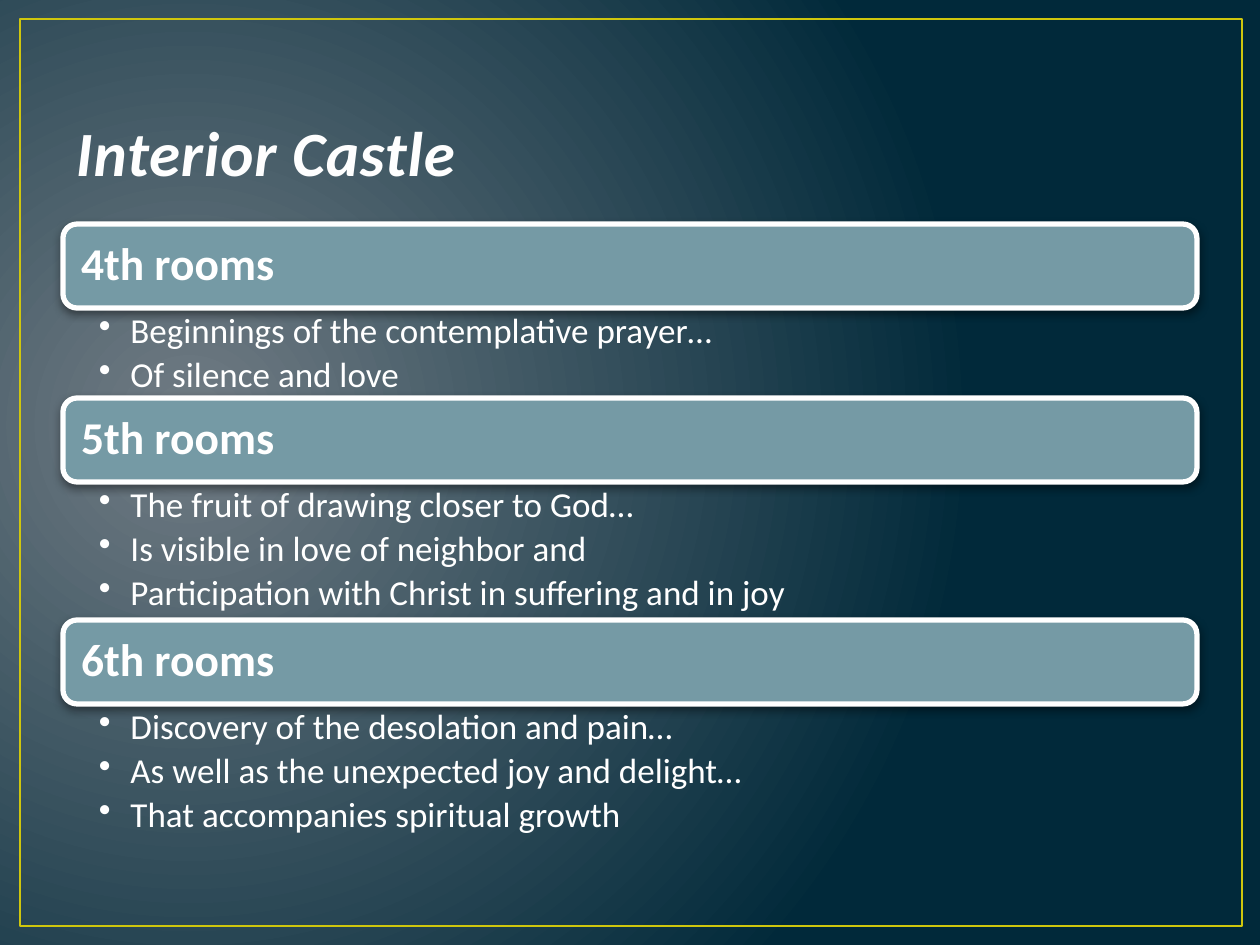
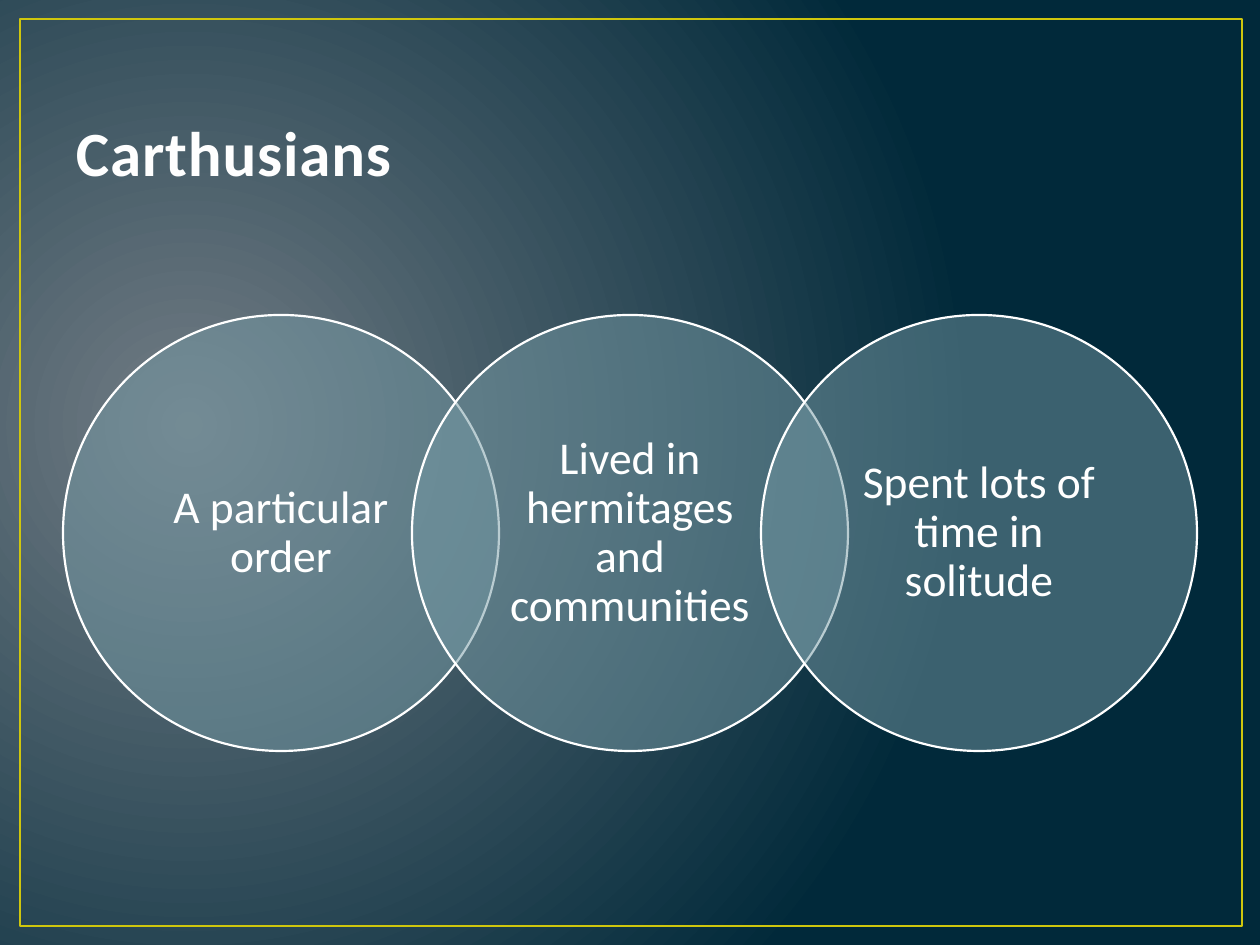
from dataclasses import dataclass

from lxml import etree
from pptx import Presentation
from pptx import util as u
from pptx.dml.color import RGBColor
from pptx.enum import shapes, text
from pptx.oxml.ns import qn

PX = u.Inches(1) / 126
WIDE, HIGH = 1260, 945
LEFT, SPAN = 63, 1134
FONT = "Calibri"

GLOW = RGBColor(0x71, 0x7C, 0x84)
NIGHT = RGBColor(0x01, 0x29, 0x3A)
GOLD = RGBColor(0xCF, 0xC6, 0x0D)
TEAL = RGBColor(0x75, 0x9A, 0xA5)
WHITE = RGBColor(0xFF, 0xFF, 0xFF)
PEARL = RGBColor(0xFE, 0xFE, 0xFE)

KIND = shapes.MSO_SHAPE
ALIGN = text.PP_ALIGN
ANCHOR = text.MSO_ANCHOR


@dataclass(frozen=True)
class Box:
    x: int
    y: int
    w: int
    h: int

    def emu(self) -> list[int]:
        return [px(n) for n in (self.x, self.y, self.w, self.h)]


@dataclass(frozen=True)
class Style:
    size: int
    bold: bool = False
    slant: bool = False
    color: RGBColor = WHITE
    align: ALIGN = ALIGN.LEFT
    line: float = 0.9
    after: float = 0


@dataclass(frozen=True)
class Room:
    name: str
    notes: tuple[str, ...]


ROOMS = (
    Room("4th rooms", ("Beginnings of the contemplative prayer…",
                       "Of silence and love")),
    Room("5th rooms", ("The fruit of drawing closer to God…",
                       "Is visible in love of neighbor and",
                       "Participation with Christ in suffering and in joy")),
    Room("6th rooms", ("Discovery of the desolation and pain…",
                       "As well as the unexpected joy and delight…",
                       "That accompanies spiritual growth")),
)
TRAITS = (
    "A particular order",
    "Lived in hermitages and communities",
    "Spent lots of time in solitude",
)
HEAD = Style(26, bold=True)
NOTE = Style(20, after=3.6)
TRAIT = Style(26, align=ALIGN.CENTER)


def px(n: float) -> int:
    return round(n * PX)


def add(parent, tag: str, **attrs):
    return etree.SubElement(parent, qn(tag), {k: str(v) for k, v in attrs.items()})


def write(shape, lines: tuple[str, ...], style: Style, anchor: ANCHOR,
          pad: tuple[int, int, int, int]) -> None:
    frame = shape.text_frame
    frame.text = "\n".join(lines)
    frame.word_wrap = True
    frame.vertical_anchor = anchor
    (frame.margin_left, frame.margin_top,
     frame.margin_right, frame.margin_bottom) = map(px, pad)
    for para in frame.paragraphs:
        para.alignment = style.align
        para.line_spacing = style.line
        para.space_after = u.Pt(style.after)
        for run in para.runs:
            font = run.font
            font.name, font.size = FONT, u.Pt(style.size)
            font.bold, font.italic = style.bold, style.slant
            font.color.rgb = style.color


def draw(slide, kind: KIND, box: Box, edge: RGBColor, width: float,
         fill: RGBColor | None = None):
    shape = slide.shapes.add_shape(kind, *box.emu())
    shape.shadow.inherit = False
    if fill is None:
        shape.fill.background()
    else:
        shape.fill.solid()
        shape.fill.fore_color.rgb = fill
    shape.line.color.rgb = edge
    shape.line.width = u.Pt(width)
    return shape


def paint(slide) -> None:
    fill = slide.background.fill
    fill.gradient()
    for stop, tone in zip(fill.gradient_stops, (GLOW, NIGHT)):
        stop.color.rgb = tone
    grad = slide.background._cSld.find(".//" + qn("a:gradFill"))
    grad.remove(grad.find(qn("a:lin")))
    glow = add(grad, "a:path", path="circle")
    add(glow, "a:fillToRect", l=15000, t=50000, r=85000, b=60000)


def start(deck, title: str, slant: bool = False):
    slide = deck.slides.add_slide(deck.slide_layouts[6])
    paint(slide)
    draw(slide, KIND.RECTANGLE, Box(20, 19, 1222, 907), GOLD, 1.5)
    box = slide.shapes.add_textbox(*Box(LEFT, 38, SPAN, 157).emu())
    write(box, (title,), Style(36, True, slant, PEARL, line=1.0),
          ANCHOR.BOTTOM, (13, 6, 13, 6))
    for run in box.text_frame.paragraphs[0].runs:
        run.font._element.set("spc", "50")
    return slide


def shade(shape) -> None:
    glow = shape._element.spPr.find(qn("a:effectLst"))
    drop = add(glow, "a:outerShdw", blurRad=u.Pt(5), dist=u.Pt(2),
               dir=5400000, rotWithShape=0)
    tone = add(drop, "a:srgbClr", val="000000")
    add(tone, "a:alpha", val=43000)


def dot(para) -> None:
    para.level = 1
    props = para._p.get_or_add_pPr()
    props.set("marL", str(u.Inches(0.25)))
    props.set("indent", str(-u.Inches(0.25)))
    add(props, "a:buChar", char="•")


def list_rooms(slide) -> None:
    top, bar = 224, 84
    for room in ROOMS:
        shape = draw(slide, KIND.ROUNDED_RECTANGLE, Box(LEFT, top, SPAN, bar),
                     WHITE, 3, TEAL)
        shade(shape)
        write(shape, (room.name,), HEAD, ANCHOR.MIDDLE, (14, 14, 14, 14))
        top += bar
        high = 48 * len(room.notes) - 6
        notes = slide.shapes.add_textbox(*Box(LEFT, top, SPAN, high).emu())
        write(notes, room.notes, NOTE, ANCHOR.TOP, (36, 5, 25, 5))
        for para in notes.text_frame.paragraphs:
            dot(para)
        top += high


def link_traits(slide) -> None:
    size, step = 436, 349
    for i, trait in enumerate(TRAITS):
        ring = draw(slide, KIND.OVAL, Box(LEFT + i * step, 315, size, size),
                    WHITE, 1.25, TEAL)
        tone = ring._element.spPr.find(qn("a:solidFill")).find(qn("a:srgbClr"))
        add(tone, "a:alpha", val=50000)
        write(ring, (trait,), TRAIT, ANCHOR.MIDDLE, (24, 5, 24, 5))


def main() -> None:
    deck = Presentation()
    deck.slide_width, deck.slide_height = px(WIDE), px(HIGH)
    list_rooms(start(deck, "Interior Castle", slant=True))
    link_traits(start(deck, "Carthusians"))
    deck.save("out.pptx")


if __name__ == "__main__":
    main()
